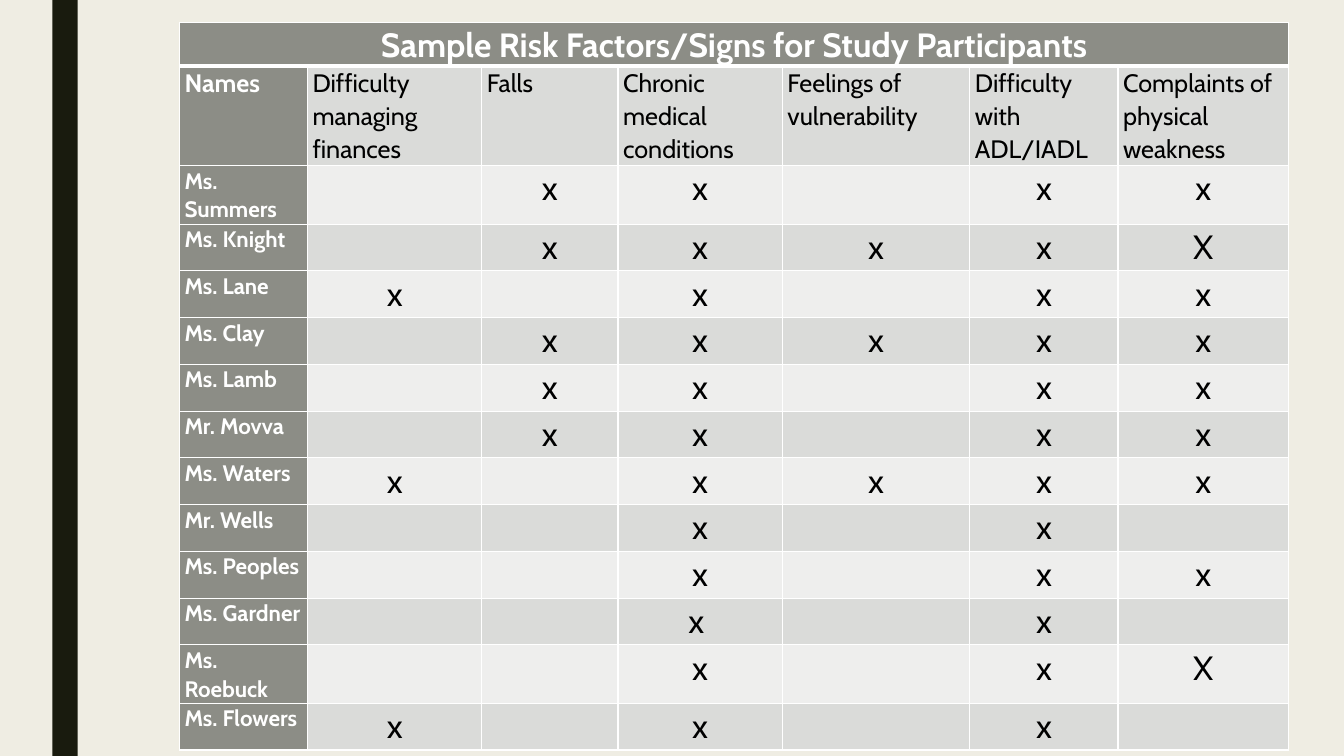
from lxml.etree import SubElement
from pptx import Presentation
from pptx.dml.color import RGBColor
from pptx.enum.shapes import MSO_SHAPE
from pptx.enum.text import PP_ALIGN
from pptx.oxml.ns import qn
from pptx.util import Inches, Pt

CREAM = RGBColor(0xEF, 0xED, 0xE3)
DARK_OLIVE = RGBColor(0x19, 0x1B, 0x0E)
GRAY = RGBColor(0x8C, 0x8D, 0x86)
BAND_DARK = RGBColor(0xDA, 0xDB, 0xD9)
BAND_LIGHT = RGBColor(0xEE, 0xEE, 0xED)
WHITE = RGBColor(0xFF, 0xFF, 0xFF)
BLACK = RGBColor(0, 0, 0)
FONT = "Cabin"

SLIDE_WIDTH, SLIDE_HEIGHT = 13.33, 7.5
BAR_BOX = (0.52, 0, 0.25, SLIDE_HEIGHT)
TABLE_BOX = (1.78, 0.22, 11, 7.19)
COLUMN_WIDTHS = [1.27, 1.73, 1.35, 1.63, 1.86, 1.47, 1.69]
TITLE_HEIGHT, HEADER_HEIGHT, ROW_HEIGHT, TALL_ROW_HEIGHT = 0.42, 0.99, 0.464, 0.58
TALL_ROWS = ("Ms. Summers", "Ms. Roebuck")

TITLE = "Sample Risk Factors/Signs for Study Participants"
HEADERS = ["Names", "Difficulty managing finances", "Falls", "Chronic medical conditions",
           "Feelings of vulnerability", "Difficulty with ADL/IADL",
           "Complaints of physical weakness"]
# One mark per risk factor, separated by bars
PARTICIPANTS = {
    "Ms. Summers": "|x|x||x|x",
    "Ms. Knight": "|x|x|x|x|X",
    "Ms. Lane": "x||x||x|x",
    "Ms. Clay": "|x|x|x|x|x",
    "Ms. Lamb": "|x|x||x|x",
    "Mr. Movva": "|x|x||x|x",
    "Ms. Waters": "x||x|x|x|x",
    "Mr. Wells": "||x||x|",
    "Ms. Peoples": "||x||x|x",
    "Ms. Gardner": "||x ||x|",
    "Ms. Roebuck": "||x||x|X",
    "Ms. Flowers": "x||x||x|",
}


def write_text(cell, text, size=18, color=BLACK, bold=False, align=PP_ALIGN.LEFT):
    cell.margin_left = cell.margin_right = Inches(0.05)
    cell.margin_top = cell.margin_bottom = 0
    para = cell.text_frame.paragraphs[0]
    para.alignment = align
    para.line_spacing = 1.07
    span = para.add_run()
    span.text = text
    span.font.name = FONT
    span.font.size = Pt(size)
    span.font.bold = bold
    span.font.color.rgb = color


def set_borders(cell, **widths):
    """White lines of 1 point, unless a side is given its own width."""
    properties = cell._tc.get_or_add_tcPr()
    for index, side in enumerate("LRTB"):
        line = SubElement(properties, qn(f"a:ln{side}"), w=str(Pt(widths.get(side, 1))))
        fill = SubElement(line, qn("a:solidFill"))
        SubElement(fill, qn("a:srgbClr"), val=str(WHITE))
        properties.insert(index, line)


def fill_cell(cell, color):
    cell.fill.solid()
    cell.fill.fore_color.rgb = color


def add_side_bar(slide, box):
    bar = slide.shapes.add_shape(MSO_SHAPE.RECTANGLE, *map(Inches, box))
    bar.shadow.inherit = False
    bar.fill.solid()
    bar.fill.fore_color.rgb = DARK_OLIVE
    bar.line.fill.background()


def add_risk_table(slide, box):
    table = slide.shapes.add_table(len(PARTICIPANTS) + 2, len(HEADERS),
                                   *map(Inches, box)).table
    table.first_row = table.horz_banding = False
    for column, width in zip(table.columns, COLUMN_WIDTHS):
        column.width = Inches(width)
    heights = [TITLE_HEIGHT, HEADER_HEIGHT]
    heights += [TALL_ROW_HEIGHT if name in TALL_ROWS else ROW_HEIGHT for name in PARTICIPANTS]
    for row, height in zip(table.rows, heights):
        row.height = Inches(height)

    # Title across all columns
    for cell in table.rows[0].cells:
        fill_cell(cell, GRAY)
        set_borders(cell, B=3)
    title_cell = table.cell(0, 0)
    title_cell.merge(table.cell(0, len(HEADERS) - 1))
    write_text(title_cell, TITLE, size=24, color=WHITE, bold=True, align=PP_ALIGN.CENTER)

    # Header row, then one row for each participant
    body = [HEADERS] + [[name, *marks.split("|")] for name, marks in PARTICIPANTS.items()]
    for row_index, texts in enumerate(body, start=1):
        is_header = row_index == 1
        band = BAND_DARK if row_index % 2 else BAND_LIGHT
        for column_index, text in enumerate(texts):
            cell = table.cell(row_index, column_index)
            fill_cell(cell, band if column_index else GRAY)
            set_borders(cell, T=3 if is_header else 1)
            if column_index == 0:
                write_text(cell, text, size=18 if is_header else 16, color=WHITE, bold=True)
            elif is_header:
                write_text(cell, text)
            elif text:
                write_text(cell, text, size=24, align=PP_ALIGN.CENTER)


def main():
    deck = Presentation()
    deck.slide_width = Inches(SLIDE_WIDTH)
    deck.slide_height = Inches(SLIDE_HEIGHT)
    page = deck.slides.add_slide(deck.slide_layouts[6])
    page.background.fill.solid()
    page.background.fill.fore_color.rgb = CREAM
    add_side_bar(page, BAR_BOX)
    add_risk_table(page, TABLE_BOX)
    deck.save("out.pptx")


if __name__ == "__main__":
    main()
